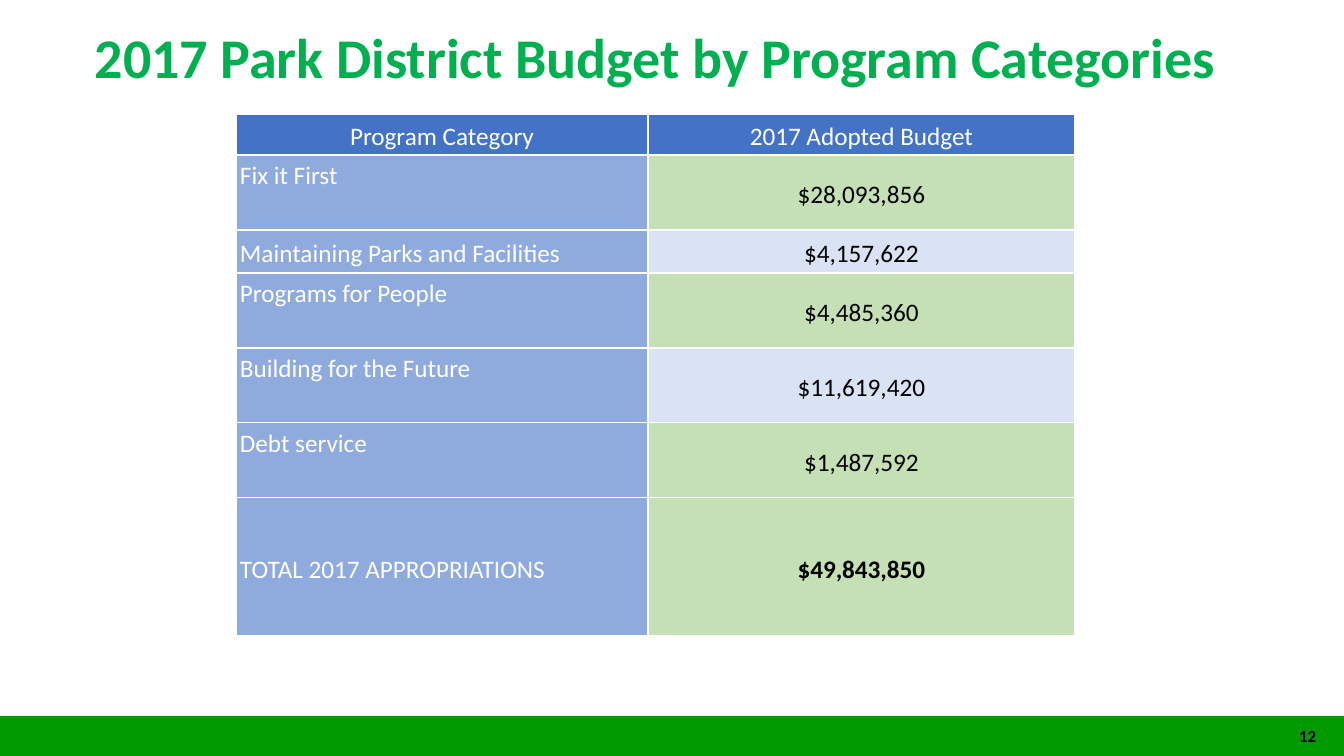
from dataclasses import dataclass

from lxml.etree import SubElement
from pptx import Presentation
from pptx.dml.color import RGBColor
from pptx.enum.shapes import MSO_SHAPE
from pptx.enum.text import MSO_ANCHOR as Anchor, PP_ALIGN as Align
from pptx.oxml.ns import qn
from pptx.slide import Slide
from pptx.table import _Cell as Cell
from pptx.text.text import TextFrame
from pptx.util import Emu, Pt

EMU_PER_PX = 914400 / 100.8
WHITE, BLACK = "FFFFFF", "000000"
HEADER, LABEL, GREEN, BLUE = "4472C4", "8FAADC", "C5E0B4", "DAE3F3"


@dataclass(frozen=True)
class BudgetRow:
    """One program category with its adopted budget."""
    label: str
    amount: str
    height: int = 75
    label_anchor: Anchor = Anchor.TOP
    bold: bool = False


@dataclass(frozen=True)
class Box:
    """A rectangle in px."""
    left: int
    top: int
    width: int
    height: int

    def emu(self) -> tuple[Emu, ...]:
        """Return the rectangle in EMU."""
        return tuple(px(n) for n in (self.left, self.top, self.width, self.height))


ROWS = [
    BudgetRow("Fix it First", "$28,093,856"),
    BudgetRow("Maintaining Parks and Facilities", "$4,157,622", 43, Anchor.MIDDLE),
    BudgetRow("Programs for People", "$4,485,360"),
    BudgetRow("Building for the Future", "$11,619,420"),
    BudgetRow("Debt service", "$1,487,592"),
    BudgetRow("TOTAL 2017 APPROPRIATIONS", "$49,843,850", 138, Anchor.MIDDLE, True),
]
HEADER_HEIGHT = 41
COLUMN_WIDTHS = (412, 427)


def px(n: int) -> Emu:
    """Turn px into EMU."""
    return Emu(round(n * EMU_PER_PX))


def rgb(value: str) -> RGBColor:
    """Turn a hex string into a colour."""
    return RGBColor.from_string(value)


def write(tf: TextFrame, text: str, size: int, color: str, align: Align, bold: bool = False) -> None:
    """Set the only paragraph of a text frame."""
    p = tf.paragraphs[0]
    p.text = text
    p.alignment = align
    p.font.name = "Calibri"
    p.font.size = Pt(size)
    p.font.bold = bold
    p.font.color.rgb = rgb(color)


def add_text(s: Slide, box: Box, text: str, size: int, color: str, align: Align, anchor: Anchor) -> None:
    """Add a bold wrapped text box."""
    tf = s.shapes.add_textbox(*box.emu()).text_frame
    tf.word_wrap = True
    tf.vertical_anchor = anchor
    write(tf, text, size, color, align, True)


def add_borders(cell: Cell) -> None:
    """Give a cell thin white borders."""
    tc_pr = cell._tc.get_or_add_tcPr()
    for i, side in enumerate(("lnL", "lnR", "lnT", "lnB")):
        ln = SubElement(tc_pr, qn(f"a:{side}"), w=str(Pt(1)))
        SubElement(SubElement(ln, qn("a:solidFill")), qn("a:srgbClr"), val=WHITE)
        tc_pr.insert(i, ln)


def fill_cell(cell: Cell, text: str, fill: str, color: str, align: Align,
              anchor: Anchor = Anchor.MIDDLE, bold: bool = False) -> None:
    """Write and style one table cell."""
    cell.margin_left = cell.margin_right = px(4)
    cell.margin_top, cell.margin_bottom = px(1), 0
    cell.vertical_anchor = anchor
    cell.fill.solid()
    cell.fill.fore_color.rgb = rgb(fill)
    add_borders(cell)
    write(cell.text_frame, text, 18, color, align, bold)
    cell.text_frame.paragraphs[0].line_spacing = 1.15


def add_budget_table(s: Slide) -> None:
    """Add the table of program categories."""
    heights = [HEADER_HEIGHT, *(row.height for row in ROWS)]
    box = Box(236, 114, sum(COLUMN_WIDTHS), sum(heights))
    table = s.shapes.add_table(len(heights), len(COLUMN_WIDTHS), *box.emu()).table
    for column, width in zip(table.columns, COLUMN_WIDTHS):
        column.width = px(width)
    for table_row, height in zip(table.rows, heights):
        table_row.height = px(height)
    for i, heading in enumerate(("Program Category", "2017 Adopted Budget")):
        fill_cell(table.cell(0, i), heading, HEADER, WHITE, Align.CENTER)
    for i, row in enumerate(ROWS, 1):
        band = BLUE if i in (2, 4) else GREEN
        fill_cell(table.cell(i, 0), row.label, LABEL, WHITE, Align.LEFT, row.label_anchor)
        fill_cell(table.cell(i, 1), row.amount, band, BLACK, Align.CENTER, bold=row.bold)


def add_footer(s: Slide) -> None:
    """Add the green bar with the slide number."""
    bar = s.shapes.add_shape(MSO_SHAPE.RECTANGLE, *Box(0, 716, 1344, 40).emu())
    bar.shadow.inherit = False
    bar.fill.solid()
    bar.fill.fore_color.rgb = rgb("009900")
    bar.line.fill.background()
    add_text(s, Box(1024, 716, 302, 40), "12", 12, BLACK, Align.RIGHT, Anchor.MIDDLE)


def main() -> None:
    """Build and save the slide."""
    prs = Presentation()
    prs.slide_width, prs.slide_height = px(1344), px(756)
    s = prs.slides.add_slide(prs.slide_layouts[6])
    add_budget_table(s)
    add_text(s, Box(53, 18, 1204, 78), "2017 Park District Budget by Program Categories",
             40, "00B050", Align.CENTER, Anchor.TOP)
    add_footer(s)
    prs.save("out.pptx")


if __name__ == "__main__":
    main()
